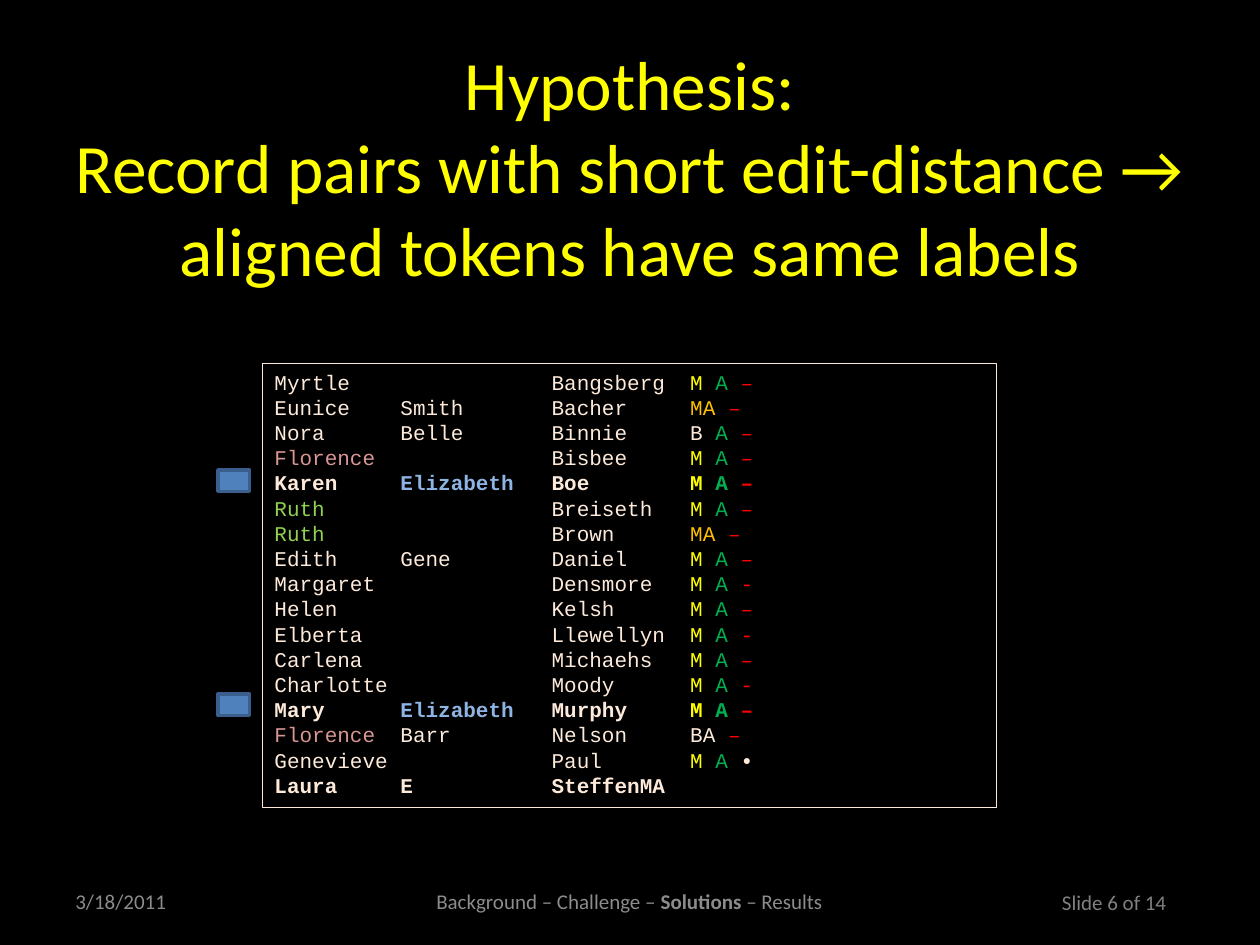
from dataclasses import dataclass

from lxml import etree
from pptx import Presentation
from pptx.dml.color import RGBColor
from pptx.enum.shapes import MSO_SHAPE
from pptx.enum.text import MSO_ANCHOR, MSO_AUTO_SIZE, PP_ALIGN
from pptx.oxml.ns import qn
from pptx.util import Inches, Pt

RECT = MSO_SHAPE.RECTANGLE
TOP, MIDDLE = MSO_ANCHOR.TOP, MSO_ANCHOR.MIDDLE
LEFT, CENTER = PP_ALIGN.LEFT, PP_ALIGN.CENTER
NO_AUTOFIT = MSO_AUTO_SIZE.NONE
TITLE_ONLY = 5


@dataclass(frozen=True)
class Theme:
    background: str = "000000"
    title: str = "FFFF00"
    footer: str = "8C8C8C"
    number: str = "808080"
    cream: str = "FDEADA"
    marker: str = "4F81BD"
    marker_line: str = "3A5F8C"
    font: str = "Calibri"
    mono: str = "Courier New"
    title_size: float = 39.6
    text_size: float = 12
    row_spacing: float = 14.4


THEME = Theme()

# Words that are coloured wherever they occur; all others are cream
TOKEN_COLORS = {
    "Florence": "D99694", "Ruth": "92D050", "Elizabeth": "8EB4E3",
    "M": "FFFF00", "A": "00B050", "MA": "FFC000", "–": "FF0000", "-": "FF0000",
}

# First name, middle name, last name, labels
RECORDS = [
    ("Myrtle", "", "Bangsberg", "M A –"),
    ("Eunice", "Smith", "Bacher", "MA –"),
    ("Nora", "Belle", "Binnie", "B A –"),
    ("Florence", "", "Bisbee", "M A –"),
    ("Karen", "Elizabeth", "Boe", "M A –"),
    ("Ruth", "", "Breiseth", "M A –"),
    ("Ruth", "", "Brown", "MA –"),
    ("Edith", "Gene", "Daniel", "M A –"),
    ("Margaret", "", "Densmore", "M A -"),
    ("Helen", "", "Kelsh", "M A –"),
    ("Elberta", "", "Llewellyn", "M A -"),
    ("Carlena", "", "Michaehs", "M A –"),
    ("Charlotte", "", "Moody", "M A -"),
    ("Mary", "Elizabeth", "Murphy", "M A –"),
    ("Florence", "Barr", "Nelson", "BA –"),
    ("Genevieve", "", "Paul", "M A •"),
    ("Laura", "E", "SteffenMA", ""),
]
BOLD_FIRST_NAMES = {"Karen", "Mary", "Laura"}
COLUMN_STOPS = (1.0, 2.2, 3.3)


def style_run(r, color, size=THEME.text_size, font=THEME.font, bold=False):
    r.font.name = font
    r.font.size = Pt(size)
    r.font.bold = bold
    r.font.color.rgb = RGBColor.from_string(color)


def set_title(slide, text):
    sp = slide.shapes.title
    sp.left, sp.top = Inches(0.5), Inches(0.3)
    sp.width, sp.height = Inches(9), Inches(2.03)
    tf = sp.text_frame
    tf.text = text
    tf.auto_size = NO_AUTOFIT
    tf.vertical_anchor = MIDDLE
    p = tf.paragraphs[0]
    p.alignment = CENTER
    for r in p.runs:
        style_run(r, THEME.title, THEME.title_size)


def add_footer(slide, box, parts, color=THEME.footer, align=LEFT, anchor=MIDDLE):
    """Add a small text box; parts are (text, bold) pairs."""
    tf = slide.shapes.add_textbox(*map(Inches, box)).text_frame
    tf.word_wrap = True
    tf.vertical_anchor = anchor
    p = tf.paragraphs[0]
    p.alignment = align
    for text, bold in parts:
        r = p.add_run()
        r.text = text
        style_run(r, color, bold=bold)


def add_rect(slide, box, line, width, fill=None):
    sp = slide.shapes.add_shape(RECT, *map(Inches, box))
    sp.shadow.inherit = False
    if fill:
        sp.fill.solid()
        sp.fill.fore_color.rgb = RGBColor.from_string(fill)
    else:
        sp.fill.background()
    sp.line.color.rgb = RGBColor.from_string(line)
    sp.line.width = Pt(width)
    return sp


def set_tab_stops(p, stops):
    tabs = etree.SubElement(p._p.get_or_add_pPr(), qn("a:tabLst"))
    for stop in stops:
        etree.SubElement(tabs, qn("a:tab"), pos=str(Inches(stop)), algn="l")


def add_record(p, record):
    """Write one record, with a tab between columns and a run for each token."""
    *names, labels = record
    p.alignment = LEFT
    p.line_spacing = Pt(THEME.row_spacing)
    set_tab_stops(p, COLUMN_STOPS)
    tokens = [name + "\t" for name in names]
    tokens += [label + " " for label in labels.split()]
    tokens[-1] = tokens[-1].rstrip()
    for token in tokens:
        word = token.strip()
        r = p.add_run()
        r.text = token
        bold = names[0] in BOLD_FIRST_NAMES or word == "•"
        style_run(r, TOKEN_COLORS.get(word, THEME.cream), font=THEME.mono, bold=bold)


def add_record_list(slide, box, records):
    tf = add_rect(slide, box, THEME.cream, 0.25).text_frame
    tf.word_wrap = True
    tf.vertical_anchor = TOP
    for i, record in enumerate(records):
        p = tf.add_paragraph() if i else tf.paragraphs[0]
        add_record(p, record)


def main():
    prs = Presentation()
    prs.slide_width, prs.slide_height = Inches(10), Inches(7.5)
    slide = prs.slides.add_slide(prs.slide_layouts[TITLE_ONLY])
    slide.background.fill.solid()
    slide.background.fill.fore_color.rgb = RGBColor.from_string(THEME.background)

    # Title
    set_title(slide, "Hypothesis:\vRecord pairs with short edit-distance → "
                     "aligned tokens have same labels")

    # Records, with markers beside the matching pair
    add_record_list(slide, (2.08, 2.88, 5.83, 3.53), RECORDS)
    for top in (3.73, 5.51):
        add_rect(slide, (1.73, top, 0.25, 0.17), THEME.marker_line, 2, THEME.marker)

    # Footer
    add_footer(slide, (0.5, 6.95, 2.33, 0.4), [("3/18/2011", False)])
    add_footer(slide, (2.83, 6.95, 4.33, 0.4),
               [("Background – Challenge – ", False), ("Solutions", True),
                (" – Results", False)], align=CENTER)
    add_footer(slide, (8.33, 7.01, 1.17, 0.3), [("Slide 6 of 14", False)],
               color=THEME.number, anchor=TOP)

    prs.save("out.pptx")


if __name__ == "__main__":
    main()
